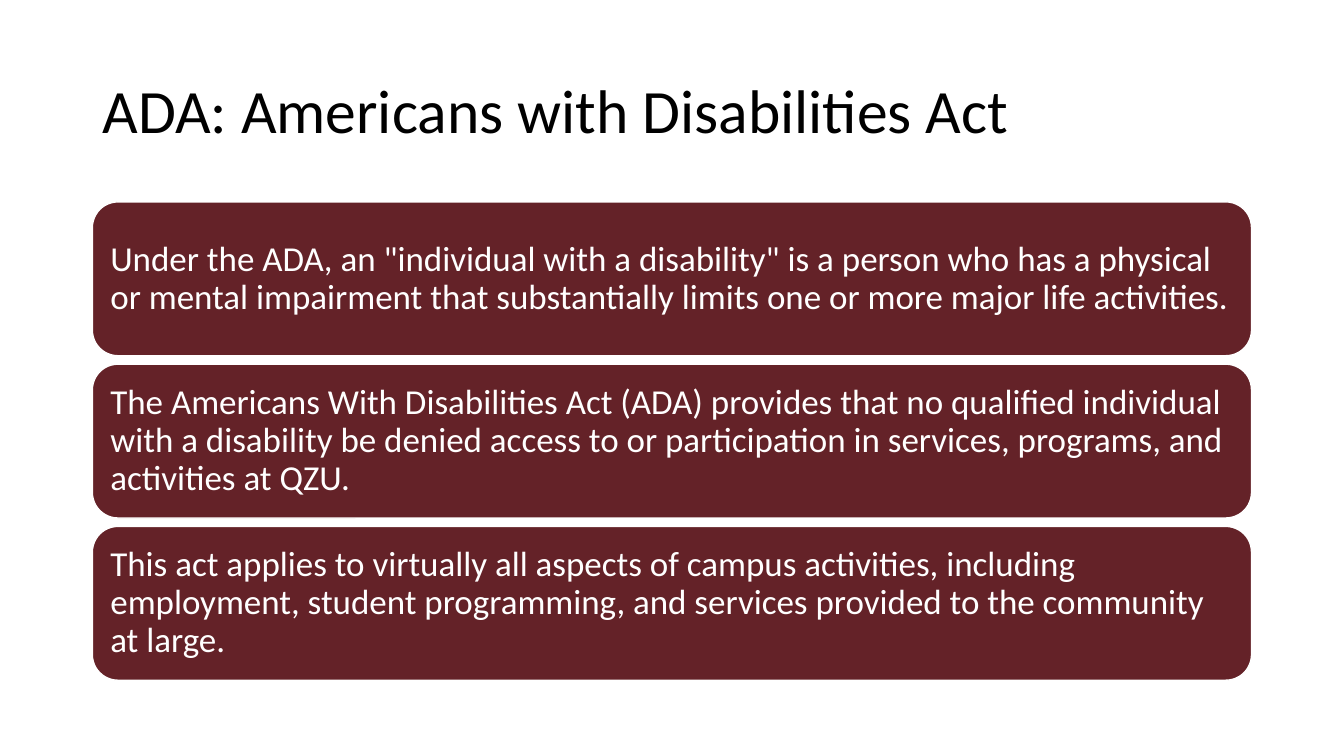
from pptx import Presentation
from pptx.dml.color import RGBColor
from pptx.enum.shapes import MSO_SHAPE
from pptx.enum.text import MSO_ANCHOR, PP_ALIGN
from pptx.util import Pt

MAROON = RGBColor(0x64, 0x22, 0x28)
WHITE = RGBColor(0xFF, 0xFF, 0xFF)
BLACK = RGBColor(0, 0, 0)

LEFT, WIDTH = 66, 828
TOP, HEIGHT, PITCH = 144.2, 109.9, 115.9

STATEMENTS = [
    'Under the ADA, an "individual with a disability" is a person who has a physical '
    'or mental impairment that substantially limits one or more major life activities.',
    'The Americans With Disabilities Act (ADA) provides that no qualified individual '
    'with a disability be denied access to or participation in services, programs, '
    'and activities at QZU.',
    'This act applies to virtually all aspects of campus activities, including '
    'employment, student programming, and services provided to the community at large.',
]


def format_text(tf, size, color):
    tf.word_wrap = True
    tf.vertical_anchor = MSO_ANCHOR.MIDDLE
    p = tf.paragraphs[0]
    p.alignment = PP_ALIGN.LEFT
    p.line_spacing = 0.9
    p.font.name = "Calibri"
    p.font.size = Pt(size)
    p.font.color.rgb = color


prs = Presentation()
prs.slide_width, prs.slide_height = Pt(960), Pt(540)
s = prs.slides.add_slide(prs.slide_layouts[5])

title = s.shapes.title
title.left, title.top, title.width, title.height = Pt(LEFT), Pt(28.75), Pt(WIDTH), Pt(104.4)
title.text_frame.text = "ADA: Americans with Disabilities Act"
format_text(title.text_frame, 44, BLACK)

for i, statement in enumerate(STATEMENTS):
    sp = s.shapes.add_shape(MSO_SHAPE.ROUNDED_RECTANGLE, Pt(LEFT), Pt(TOP + i * PITCH),
                            Pt(WIDTH), Pt(HEIGHT))
    sp.shadow.inherit = False
    sp.fill.solid()
    sp.fill.fore_color.rgb = MAROON
    sp.line.color.rgb = WHITE
    sp.line.width = Pt(1)
    tf = sp.text_frame
    tf.margin_left = tf.margin_right = tf.margin_top = tf.margin_bottom = Pt(7.5)
    tf.text = statement
    format_text(tf, 25, WHITE)

prs.save("out.pptx")
